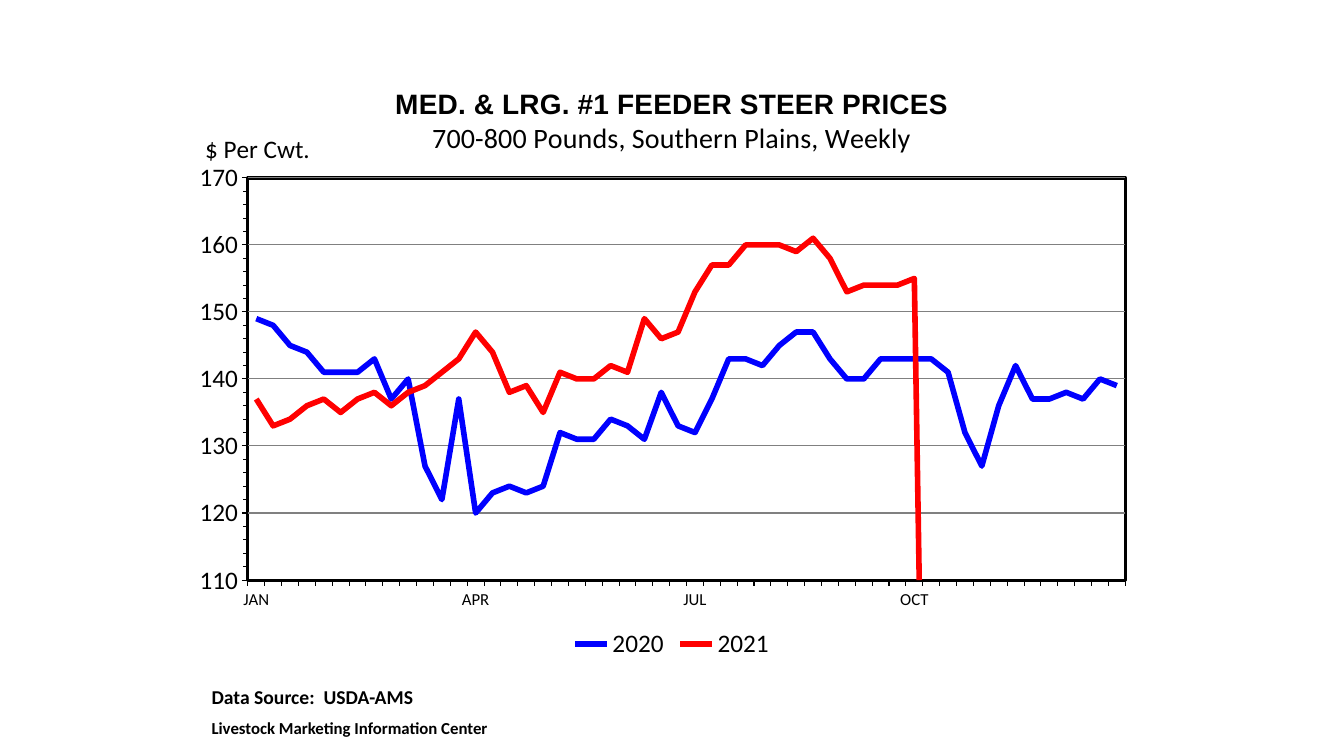
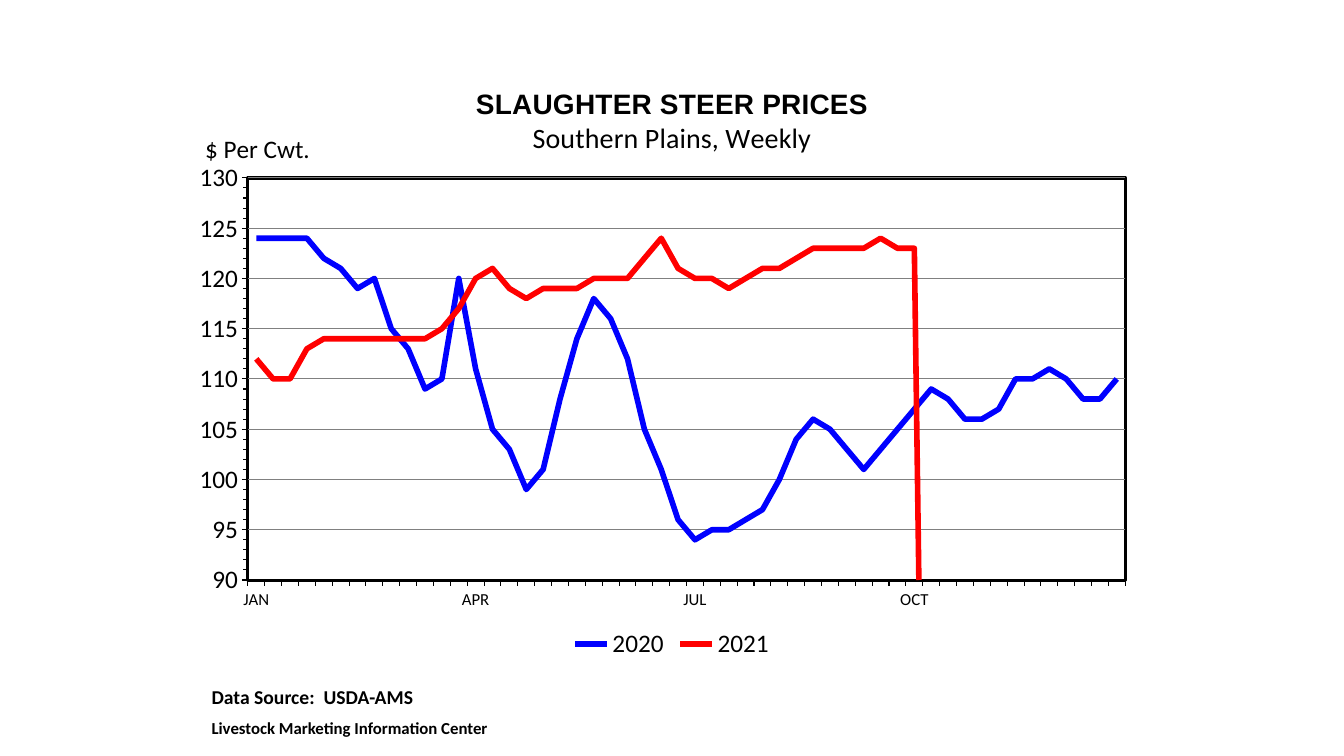
from dataclasses import dataclass

from lxml.etree import SubElement
from pptx import Presentation
from pptx.chart.axis import CategoryAxis, ValueAxis
from pptx.chart.data import CategoryChartData
from pptx.dml.color import RGBColor
from pptx.enum.chart import XL_CHART_TYPE, XL_LEGEND_POSITION, XL_TICK_MARK
from pptx.oxml import parse_xml
from pptx.oxml.ns import nsdecls, qn
from pptx.util import Inches, Pt

BLACK, WHITE, GRAY = "000000", "FFFFFF", "808080"
BLUE, RED = "0000FF", "FF0000"
BODY_FONT, TITLE_FONT = "Calibri", "Arial"
CHART_W, CHART_H = 9.67, 5.92
WEEKS = 52
QUARTERS = ("JAN", "APR", "JUL", "OCT")
QUARTER_WEEKS = WEEKS // len(QUARTERS)


@dataclass(frozen=True)
class PriceChart:
    title: str
    subtitle: str
    title_left: float
    low: int
    high: int
    step: int
    prices_2020: tuple[int, ...]
    prices_2021: tuple[int, ...]


CHARTS = (
    PriceChart(
        "MED. & LRG. #1 FEEDER STEER PRICES",
        "700-800 Pounds, Southern Plains, Weekly",
        2.06, 110, 170, 10,
        (149, 148, 145, 144, 141, 141, 141, 143, 137, 140, 127, 122, 137,
         120, 123, 124, 123, 124, 132, 131, 131, 134, 133, 131, 138, 133,
         132, 137, 143, 143, 142, 145, 147, 147, 143, 140, 140, 143, 143,
         143, 143, 141, 132, 127, 136, 142, 137, 137, 138, 137, 140, 139),
        (137, 133, 134, 136, 137, 135, 137, 138, 136, 138, 139, 141, 143,
         147, 144, 138, 139, 135, 141, 140, 140, 142, 141, 149, 146, 147,
         153, 157, 157, 160, 160, 160, 159, 161, 158, 153, 154, 154, 154,
         155),
    ),
    PriceChart(
        "SLAUGHTER STEER PRICES",
        "Southern Plains, Weekly",
        2.86, 90, 130, 5,
        (124, 124, 124, 124, 122, 121, 119, 120, 115, 113, 109, 110, 120,
         111, 105, 103, 99, 101, 108, 114, 118, 116, 112, 105, 101, 96,
         94, 95, 95, 96, 97, 100, 104, 106, 105, 103, 101, 103, 105,
         107, 109, 108, 106, 106, 107, 110, 110, 111, 110, 108, 108, 110),
        (112, 110, 110, 113, 114, 114, 114, 114, 114, 114, 114, 115, 117,
         120, 121, 119, 118, 119, 119, 119, 120, 120, 120, 122, 124, 121,
         120, 120, 119, 120, 121, 121, 122, 123, 123, 123, 123, 124, 123,
         123),
    ),
)


def rgb(color: str) -> RGBColor:
    return RGBColor.from_string(color)


def style_font(font, size: float, name: str = BODY_FONT, bold: bool = False) -> None:
    font.size = Pt(size)
    font.name = name
    font.bold = bold
    font.color.rgb = rgb(BLACK)


def style_line(line, color: str, width: float) -> None:
    line.color.rgb = rgb(color)
    line.width = Pt(width)


def place(element, **settings: str | float) -> None:
    layout = element.find(qn("c:layout"))
    if layout is None:
        layout = parse_xml(f"<c:layout {nsdecls('c')}/>")
        element.insert(0 if element.find(qn("c:tx")) is None else 1, layout)
    for child in list(layout):
        layout.remove(child)
    manual = SubElement(layout, qn("c:manualLayout"))
    for tag, value in settings.items():
        SubElement(manual, qn(f"c:{tag}")).set("val", str(value))


def place_title(element, left: float, top: float) -> None:
    place(element, xMode="edge", yMode="edge", x=left / CHART_W, y=top / CHART_H)


def frame_plot(plot_area) -> None:
    place(plot_area, layoutTarget="inner", xMode="edge", yMode="edge",
          x=0.065, y=0.185, w=0.9, h=0.674)
    plot_area.append(parse_xml(
        f'<c:spPr {nsdecls("c", "a")}>'
        f'<a:solidFill><a:srgbClr val="{WHITE}"/></a:solidFill>'
        f'<a:ln w="{Pt(2.25)}"><a:solidFill><a:srgbClr val="{BLACK}"/>'
        '</a:solidFill></a:ln></c:spPr>'))


def style_weeks(axis: CategoryAxis) -> None:
    axis.major_tick_mark = XL_TICK_MARK.OUTSIDE
    style_line(axis.format.line, BLACK, 0.75)
    last = axis._element.find(qn("c:noMultiLvlLbl"))
    for tag, skip in (("tickLblSkip", QUARTER_WEEKS), ("tickMarkSkip", 1)):
        last.addprevious(parse_xml(f'<c:{tag} {nsdecls("c")} val="{skip}"/>'))


def style_prices(axis: ValueAxis, c: PriceChart) -> None:
    axis.minimum_scale, axis.maximum_scale = c.low, c.high
    axis.major_unit, axis.minor_unit = c.step, c.step / 5
    axis.major_tick_mark = axis.minor_tick_mark = XL_TICK_MARK.OUTSIDE
    axis.has_major_gridlines = True
    style_line(axis.major_gridlines.format.line, GRAY, 0.75)
    style_line(axis.format.line, BLACK, 0.75)
    style_font(axis.tick_labels.font, 18)
    axis.has_title = True
    tf = axis.axis_title.text_frame
    tf.text = "$ Per Cwt."
    style_font(tf.paragraphs[0].runs[0].font, 18)
    title = axis.axis_title._element
    for body in title.iter(qn("a:bodyPr")):
        body.set("rot", "0")
        body.set("vert", "horz")
    place_title(title, 0.16, 0.59)


def add_title(chart, c: PriceChart) -> None:
    chart.has_title = True
    tf = chart.chart_title.text_frame
    tf.text = c.title
    tf.add_paragraph().text = c.subtitle
    style_font(tf.paragraphs[0].runs[0].font, 20, TITLE_FONT, True)
    style_font(tf.paragraphs[1].runs[0].font, 20)
    place_title(chart.chart_title._element, c.title_left, 0.17)


def add_price_chart(s, c: PriceChart) -> None:
    data = CategoryChartData()
    data.categories = [
        "" if week % QUARTER_WEEKS else QUARTERS[week // QUARTER_WEEKS]
        for week in range(WEEKS)
    ]
    for year, prices in (("2020", c.prices_2020), ("2021", c.prices_2021)):
        data.add_series(year, prices + (None,) * (WEEKS - len(prices)))
    chart = s.shapes.add_chart(
        XL_CHART_TYPE.LINE, Inches(1.83), Inches(0.67),
        Inches(CHART_W), Inches(CHART_H), data).chart
    style_font(chart.font, 12)
    add_title(chart, c)
    chart.has_legend = True
    chart.legend.position = XL_LEGEND_POSITION.BOTTOM
    chart.legend.include_in_layout = False
    style_font(chart.legend.font, 18)
    plot = chart.plots[0]
    plot.vary_by_categories = False
    for series, color in zip(plot.series, (BLUE, RED)):
        series.smooth = False
        style_line(series.format.line, color, 4)
    style_weeks(chart.category_axis)
    style_prices(chart.value_axis, c)
    for blanks in chart._chartSpace.iter(qn("c:dispBlanksAs")):
        blanks.set("val", "zero")
    frame_plot(next(chart._chartSpace.iter(qn("c:plotArea"))))


def add_source(s) -> None:
    tf = s.shapes.add_textbox(
        Inches(2), Inches(6.75), Inches(5), Inches(0.64)).text_frame
    tf.word_wrap = True
    tf.text = "Data Source:  USDA-AMS"
    p = tf.add_paragraph()
    p.text = "Livestock Marketing Information Center"
    p.space_before = Pt(6)
    for p, size in zip(tf.paragraphs, (14, 12)):
        style_font(p.runs[0].font, size, bold=True)


def main() -> None:
    prs = Presentation()
    prs.slide_width, prs.slide_height = Inches(13.33), Inches(7.5)
    for c in CHARTS:
        s = prs.slides.add_slide(prs.slide_layouts[6])
        add_price_chart(s, c)
        add_source(s)
    prs.save("out.pptx")


if __name__ == "__main__":
    main()
